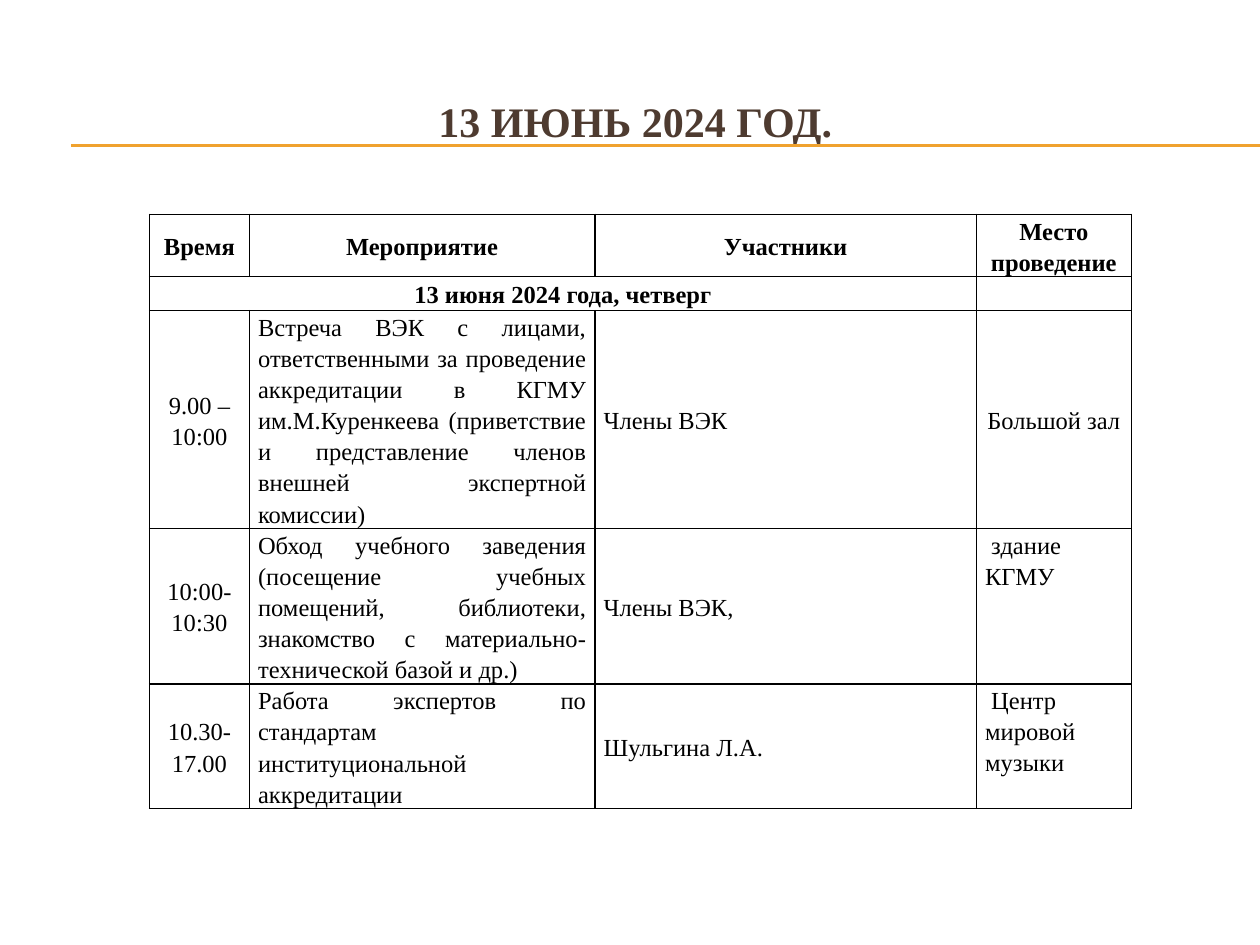
"""Builds the schedule slide for the accreditation visit of 13 June 2024."""
from dataclasses import dataclass

from lxml import etree
from pptx import Presentation
from pptx.dml.color import RGBColor
from pptx.enum.shapes import MSO_CONNECTOR
from pptx.enum.text import MSO_ANCHOR, PP_ALIGN
from pptx.oxml.ns import qn
from pptx.util import Pt

STRAIGHT = MSO_CONNECTOR.STRAIGHT
TOP, MIDDLE = MSO_ANCHOR.TOP, MSO_ANCHOR.MIDDLE
LEFT, CENTER, JUSTIFY = PP_ALIGN.LEFT, PP_ALIGN.CENTER, PP_ALIGN.JUSTIFY


@dataclass(frozen=True)
class Theme:
    font: str = "Times New Roman"
    title_size: int = 24
    table_size: int = 14
    title: str = "4E3B30"
    rule: str = "F0A22E"
    ink: str = "000000"


theme = Theme()


def style(paragraph, size, color, bold, align):
    paragraph.alignment = align
    paragraph.font.name = theme.font
    paragraph.font.size = Pt(size)
    paragraph.font.bold = bold
    paragraph.font.color.rgb = RGBColor.from_string(color)


def add_borders(cell):
    properties = cell._tc.get_or_add_tcPr()
    for position, side in enumerate(("a:lnL", "a:lnR", "a:lnT", "a:lnB")):
        border = etree.Element(qn(side), w=str(Pt(1)))
        fill = etree.SubElement(border, qn("a:solidFill"))
        etree.SubElement(fill, qn("a:srgbClr"), val=theme.ink)
        properties.insert(position, border)


presentation = Presentation()
presentation.slide_width, presentation.slide_height = Pt(720), Pt(540)
slide = presentation.slides.add_slide(presentation.slide_layouts[5])

for y in (82.8, 83.5):
    rule = slide.shapes.add_connector(STRAIGHT, Pt(40.5), Pt(y), Pt(720), Pt(y))
    rule.line.color.rgb = RGBColor.from_string(theme.rule)
    rule.line.width = Pt(0.75)
    etree.SubElement(rule._element.spPr, qn("a:effectLst"))

heading = slide.shapes.title
heading.left, heading.top, heading.width, heading.height = Pt(24), Pt(36), Pt(684), Pt(66)
heading.text_frame.text = "13 ИЮНЬ 2024 ГОД. "
heading.text_frame.vertical_anchor = MIDDLE
style(heading.text_frame.paragraphs[0], theme.title_size, theme.title, True, CENTER)

schedule = [
    ["Время", "Мероприятие", "Участники", "Место проведение"],
    ["13 июня 2024 года, четверг", "", "", ""],
    [
        "9.00 – 10:00",
        "Встреча ВЭК с лицами, ответственными за проведение аккредитации в КГМУ "
        "им.М.Куренкеева (приветствие и представление членов внешней экспертной комиссии)",
        "Члены ВЭК",
        "Большой зал ",
    ],
    [
        "10:00-10:30",
        "Обход учебного заведения (посещение учебных помещений, библиотеки, "
        "знакомство с материально-технической базой и др.)",
        "Члены ВЭК, ",
        " здание КГМУ",
    ],
    [
        "10.30-17.00",
        "Работа экспертов по стандартам институциональной аккредитации",
        "Шульгина Л.А.",
        " Центр мировой музыки",
    ],
]
column_widths = (57, 197.5, 218, 88.5)
row_heights = (35.3, 19.4, 105.8, 87.8, 35.3)
header_rows, place_column, first_tour_row = 2, 3, 3

table = slide.shapes.add_table(
    len(schedule), len(column_widths), Pt(85.5), Pt(122.5),
    Pt(sum(column_widths)), Pt(sum(row_heights)),
).table
for column, width in zip(table.columns, column_widths):
    column.width = Pt(width)
for row, height in zip(table.rows, row_heights):
    row.height = Pt(height)
table.cell(1, 0).merge(table.cell(1, 2))

for r, entries in enumerate(schedule):
    for c, entry in enumerate(entries):
        cell = table.cell(r, c)
        cell.fill.background()
        add_borders(cell)
        cell.margin_left = cell.margin_right = Pt(5)
        cell.margin_top = cell.margin_bottom = Pt(0)
        at_top = c == place_column and r >= first_tour_row
        cell.vertical_anchor = TOP if at_top else MIDDLE
        if at_top:
            align = LEFT
        elif r < header_rows or c in (0, place_column):
            align = CENTER
        else:
            align = JUSTIFY
        cell.text = entry
        paragraph = cell.text_frame.paragraphs[0]
        paragraph.line_spacing = 1.15
        style(paragraph, theme.table_size, theme.ink, r < header_rows, align)

presentation.save("out.pptx")
